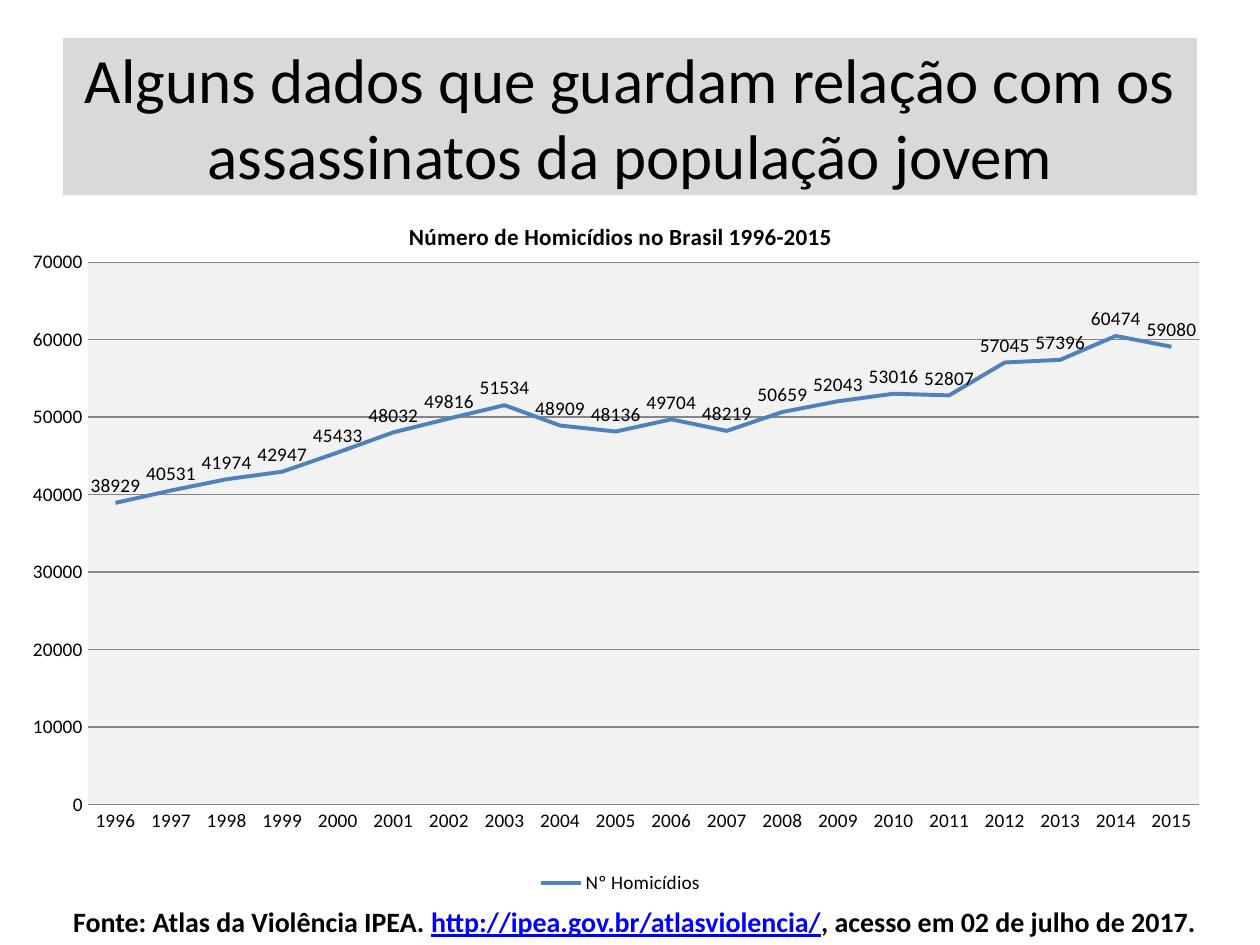
from dataclasses import dataclass

from lxml.etree import SubElement
from pptx import Presentation
from pptx.chart.data import CategoryChartData
from pptx.dml.color import RGBColor
from pptx.enum.chart import (XL_CHART_TYPE, XL_LABEL_POSITION,
                             XL_LEGEND_POSITION, XL_TICK_MARK)
from pptx.enum.text import MSO_ANCHOR, PP_ALIGN
from pptx.oxml import parse_xml
from pptx.oxml.ns import nsdecls, qn
from pptx.util import Inches, Pt


@dataclass(frozen=True)
class Theme:
    font: str = "Calibri"
    ink: RGBColor = RGBColor(0, 0, 0)
    link: RGBColor = RGBColor(0, 0, 0xFF)
    band: RGBColor = RGBColor(0xD9, 0xD9, 0xD9)
    plot: RGBColor = RGBColor(0xF2, 0xF2, 0xF2)
    grid: RGBColor = RGBColor(0x86, 0x86, 0x86)
    line: RGBColor = RGBColor(0x4F, 0x81, 0xBD)
    title: float = 36
    source: float = 16
    head: float = 13.2
    label: float = 11


THEME = Theme()
YEARS = range(1996, 2016)
DEATHS = (38929, 40531, 41974, 42947, 45433, 48032, 49816, 51534, 48909, 48136,
          49704, 48219, 50659, 52043, 53016, 52807, 57045, 57396, 60474, 59080)


def style(font, size, color=THEME.ink, bold=False):
    font.name = THEME.font
    font.size = Pt(size)
    font.bold = bold
    font.color.rgb = color


def box(*sides):
    return [Inches(side) for side in sides]


def add_title(slide, text):
    title = slide.shapes.title
    title.left, title.top, title.width, title.height = box(0.5, 0.3, 9, 1.25)
    title.fill.solid()
    title.fill.fore_color.rgb = THEME.band
    frame = title.text_frame
    frame.text = text
    frame.word_wrap = True
    frame.vertical_anchor = MSO_ANCHOR.MIDDLE
    para = frame.paragraphs[0]
    para.alignment = PP_ALIGN.CENTER
    style(para.runs[0].font, THEME.title)


def set_plot(chart, **place):
    """Fix the inner plot area, in fractions of the chart, and fill it."""
    area = chart._chartSpace.chart.plotArea
    for old in area.findall(qn("c:layout")):
        area.remove(old)
    layout = parse_xml(f"<c:layout {nsdecls('c')}><c:manualLayout/></c:layout>")
    rules = {"layoutTarget": "inner", "xMode": "edge", "yMode": "edge", **place}
    for tag, value in rules.items():
        SubElement(layout[0], qn(f"c:{tag}")).set("val", str(value))
    area.insert(0, layout)
    area.append(parse_xml(
        f"<c:spPr {nsdecls('c', 'a')}><a:solidFill>"
        f'<a:srgbClr val="{THEME.plot}"/></a:solidFill></c:spPr>'))


def set_axes(chart):
    for axis in (chart.category_axis, chart.value_axis):
        axis.major_tick_mark = axis.minor_tick_mark = XL_TICK_MARK.NONE
        style(axis.tick_labels.font, THEME.label)
    values = chart.value_axis
    values.minimum_scale, values.maximum_scale = 0, 70000
    values.major_unit = 10000
    values.format.line.fill.background()
    values.has_major_gridlines = True
    for line in (values.major_gridlines.format.line,
                 chart.category_axis.format.line):
        line.color.rgb = THEME.grid
        line.width = Pt(0.75)


def set_series(plot):
    series = plot.series[0]
    series.smooth = False
    series.marker.format.fill.background()
    series.marker.format.line.fill.background()
    series.format.line.color.rgb = THEME.line
    series.format.line.width = Pt(2.25)
    labels = series.data_labels
    labels.show_value = True
    labels.position = XL_LABEL_POSITION.ABOVE
    style(labels.font, THEME.label)


def add_chart(slide, title, name):
    data = CategoryChartData()
    data.categories = [str(year) for year in YEARS]
    data.add_series(name, DEATHS)
    chart = slide.shapes.add_chart(
        XL_CHART_TYPE.LINE, *box(0.12, 1.55, 9.61, 5.59), data).chart
    style(chart.font, THEME.label)
    chart.has_title = True
    frame = chart.chart_title.text_frame
    frame.text = title
    style(frame.paragraphs[0].runs[0].font, THEME.head, bold=True)
    chart.chart_title.include_in_layout = False
    chart.has_legend = True
    chart.legend.position = XL_LEGEND_POSITION.BOTTOM
    chart.legend.include_in_layout = False
    style(chart.legend.font, THEME.label)
    chart.plots[0].vary_by_categories = False
    set_axes(chart)
    set_series(chart.plots[0])
    set_plot(chart, x=0.06, y=0.095, w=0.918, h=0.77)


def add_source(slide, before, link, after):
    frame = slide.shapes.add_textbox(*box(0.35, 7.13, 9.37, 0.37)).text_frame
    frame.word_wrap = True
    para = frame.paragraphs[0]
    para.alignment = PP_ALIGN.CENTER
    for text in (before, link, after):
        run = para.add_run()
        run.text = text
        linked = text == link
        style(run.font, THEME.source, THEME.link if linked else THEME.ink, True)
        run.font.underline = linked


def main():
    deck = Presentation()
    deck.slide_width, deck.slide_height = box(10, 7.5)
    slide = deck.slides.add_slide(deck.slide_layouts[5])
    add_title(slide, "Alguns dados que guardam relação com os "
                     "assassinatos da população jovem")
    add_chart(slide, "Número de Homicídios no Brasil 1996-2015", "Nº Homicídios")
    add_source(slide, "Fonte: Atlas da Violência IPEA. ",
               "http://ipea.gov.br/atlasviolencia/",
               ", acesso em 02 de julho de 2017.")
    deck.save("out.pptx")


if __name__ == "__main__":
    main()
